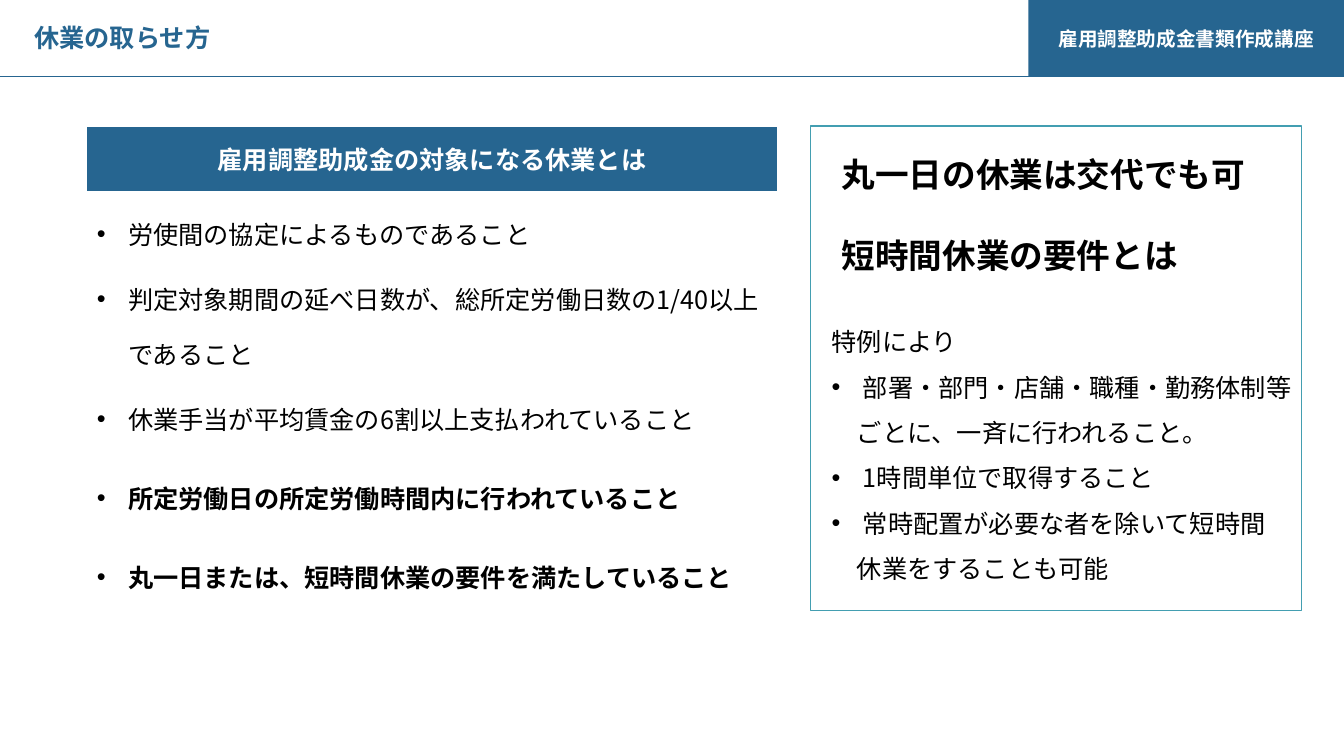
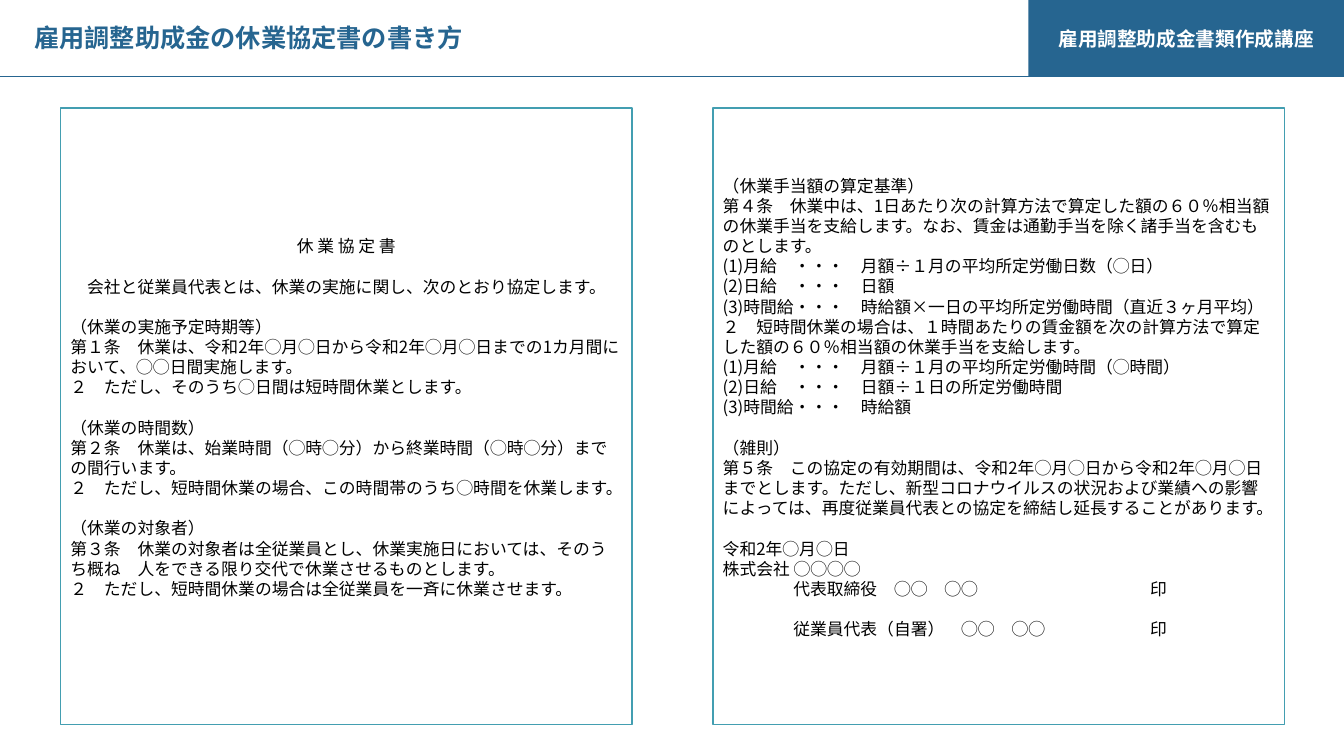
from dataclasses import dataclass

from lxml import etree
from pptx import Presentation
from pptx.dml.color import RGBColor
from pptx.enum.shapes import MSO_CONNECTOR as CONN, MSO_SHAPE as SHAPE
from pptx.enum.text import MSO_ANCHOR as ANCHOR, PP_ALIGN as ALIGN
from pptx.oxml.ns import qn
from pptx.util import Inches, Pt


@dataclass(frozen=True)
class Theme:
    """Colours, font and type sizes shared by the slides."""
    font: str = "Noto Sans CJK JP"
    navy: str = "266590"
    teal: str = "439EB1"
    black: str = "000000"
    white: str = "FFFFFF"
    band: int = 14
    body: int = 18
    lead: int = 24
    deed: int = 12
    leading: float = 1.2


T = Theme()
COURSE = "雇用調整助成金書類作成講座"

LEAVE_TITLE = "休業の取らせ方"
LEAVE_HEAD = "雇用調整助成金の対象になる休業とは"
LEAVE_RULES = [
    ("労使間の協定によるものであること", 0.65, False),
    ("判定対象期間の延べ日数が、総所定労働日数の1/40以上であること", 1.0, False),
    ("休業手当が平均賃金の6割以上支払われていること", 0.65, False),
    ("所定労働日の所定労働時間内に行われていること", 0.92, True),
    ("丸一日または、短時間休業の要件を満たしていること", 0.65, True),
]
LEADS = ["丸一日の休業は交代でも可", "短時間休業の要件とは"]
SHORT_LEAVE = [
    ("特例により", False),
    ("部署・部門・店舗・職種・勤務体制等", True),
    ("　ごとに、一斉に行われること。", False),
    ("1時間単位で取得すること", True),
    ("常時配置が必要な者を除いて短時間", True),
    ("　休業をすることも可能", False),
]

DEED_TITLE = "雇用調整助成金の休業協定書の書き方"
DEED_HEAD = "休 業 協 定 書"
DEED_LEFT = [
    [DEED_HEAD],
    ["　会社と従業員代表とは、休業の実施に関し、次のとおり協定します。"],
    ["（休業の実施予定時期等）",
     "第１条　休業は、令和2年◯月◯日から令和2年◯月◯日までの1カ月間において、◯◯日間実施します。",
     "２　ただし、そのうち◯日間は短時間休業とします。"],
    ["（休業の時間数）",
     "第２条　休業は、始業時間（◯時◯分）から終業時間（◯時◯分）までの間行います。",
     "２　ただし、短時間休業の場合、この時間帯のうち◯時間を休業します。"],
    ["（休業の対象者）",
     "第３条　休業の対象者は全従業員とし、休業実施日においては、そのうち概ね　人をできる限り交代で休業させるものとします。",
     "２　ただし、短時間休業の場合は全従業員を一斉に休業させます。"],
]
DEED_RIGHT = [
    ["（休業手当額の算定基準）",
     "第４条　休業中は、1日あたり次の計算方法で算定した額の６０％相当額の休業手当を支給します。なお、賃金は通勤手当を除く諸手当を含むものとします。",
     "(1)月給　・・・　月額÷１月の平均所定労働日数（◯日）",
     "(2)日給　・・・　日額",
     "(3)時間給・・・　時給額×一日の平均所定労働時間（直近３ヶ月平均）",
     "２　短時間休業の場合は、１時間あたりの賃金額を次の計算方法で算定した額の６０％相当額の休業手当を支給します。",
     "(1)月給　・・・　月額÷１月の平均所定労働時間（◯時間）",
     "(2)日給　・・・　日額÷１日の所定労働時間",
     "(3)時間給・・・　時給額"],
    ["（雑則）",
     "第５条　この協定の有効期間は、令和2年◯月◯日から令和2年◯月◯日までとします。ただし、新型コロナウイルスの状況および業績への影響によっては、再度従業員代表との協定を締結し延長することがあります。"],
    ["令和2年◯月◯日",
     "株式会社 ◯◯◯◯",
     "\t代表取締役　◯◯　◯◯\t印"],
    ["\t従業員代表（自署）　◯◯　◯◯\t印"],
]
SIGN_TABS = (0.7, 4.24)


def rgb(value):
    """Turn a hex string into a colour."""
    return RGBColor.from_string(value)


def box(*lengths):
    """Turn left, top, width and height in inches into lengths."""
    return [Inches(v) for v in lengths]


def add_run(p, text, size, color=T.black, bold=False):
    """Add one run in the theme font."""
    r = p.add_run()
    r.text = text
    f = r.font
    f.size, f.bold, f.name = Pt(size), bold, T.font
    f.color.rgb = rgb(color)
    etree.SubElement(r._r.get_or_add_rPr(), qn("a:ea"), typeface=T.font)


def next_par(tf, first):
    """Return the first paragraph of a frame, or a new one."""
    return tf.paragraphs[0] if first else tf.add_paragraph()


def set_bullet(p):
    """Give a paragraph a hanging round bullet."""
    pPr = p._p.get_or_add_pPr()
    pPr.set("marL", str(Inches(0.31)))
    pPr.set("indent", str(-Inches(0.31)))
    etree.SubElement(pPr, qn("a:buFont"), typeface="Arial")
    etree.SubElement(pPr, qn("a:buChar"), char="•")


def set_tabs(p, stops):
    """Give a paragraph left tab stops at the given inches."""
    tabs = etree.SubElement(p._p.get_or_add_pPr(), qn("a:tabLst"))
    for stop in stops:
        etree.SubElement(tabs, qn("a:tab"), pos=str(Inches(stop)), algn="l")


def add_rect(s, at, fill=None, line=None):
    """Add a flat rectangle with optional fill and outline."""
    sp = s.shapes.add_shape(SHAPE.RECTANGLE, *box(*at))
    sp.shadow.inherit = False
    if fill:
        sp.fill.solid()
        sp.fill.fore_color.rgb = rgb(fill)
    else:
        sp.fill.background()
    if line:
        sp.line.color.rgb = rgb(line)
        sp.line.width = Pt(1)
    else:
        sp.line.fill.background()
    sp.text_frame.word_wrap = True
    sp.text_frame.vertical_anchor = ANCHOR.MIDDLE
    return sp


def add_text(s, at):
    """Add a wrapping text box and return its frame."""
    tf = s.shapes.add_textbox(*box(*at)).text_frame
    tf.word_wrap = True
    return tf


def add_slide(prs, title):
    """Add a slide with the course band, the rule and its title."""
    s = prs.slides.add_slide(prs.slide_layouts[5])
    p = add_rect(s, (10.2, 0, 3.13, 0.76), T.navy).text_frame.paragraphs[0]
    p.alignment = ALIGN.CENTER
    add_run(p, COURSE, T.band, T.white, True)

    rule = s.shapes.add_connector(CONN.STRAIGHT, *box(13.33, 0.76, 0, 0.76))
    rule.line.color.rgb = rgb(T.navy)
    rule.line.width = Pt(0.5)
    etree.SubElement(rule._element.spPr, qn("a:effectLst"))

    sp = s.shapes.title
    sp.left, sp.top, sp.width, sp.height = box(0.24, 0.17, 9.5, 0.4)
    tf = sp.text_frame
    tf.word_wrap, tf.vertical_anchor = True, ANCHOR.MIDDLE
    p = tf.paragraphs[0]
    p.alignment = ALIGN.LEFT
    add_run(p, title, T.body, T.navy, True)
    return s


def add_rules_table(s):
    """Add the table of conditions for eligible leave."""
    heights = [0.65] + [h for _, h, _ in LEAVE_RULES]
    at = box(0.86, 1.25, 6.85, sum(heights))
    table = s.shapes.add_table(len(heights), 1, *at).table
    table.first_row = table.horz_banding = False
    for row, height in zip(table.rows, heights):
        row.height = Inches(height)
        cell = row.cells[0]
        cell.vertical_anchor = ANCHOR.MIDDLE
        cell.fill.background()

    head = table.cell(0, 0)
    head.fill.solid()
    head.fill.fore_color.rgb = rgb(T.navy)
    p = head.text_frame.paragraphs[0]
    p.alignment = ALIGN.CENTER
    add_run(p, LEAVE_HEAD, T.body, T.white, True)

    for i, (text, _, bold) in enumerate(LEAVE_RULES, 1):
        p = table.cell(i, 0).text_frame.paragraphs[0]
        p.line_spacing = 1.5
        set_bullet(p)
        add_run(p, text, T.body, bold=bold)


def add_short_leave(s):
    """Add the framed panel on short-time leave."""
    add_rect(s, (8.04, 1.25, 4.87, 4.81), line=T.teal)
    tf = add_text(s, (8.25, 1.48, 4.5, 1.31))
    for i, text in enumerate(LEADS):
        p = next_par(tf, i == 0)
        p.line_spacing = Pt(T.lead * T.leading)
        p.space_before = Pt(T.lead * T.leading if i else 0)
        add_run(p, text, T.lead, bold=True)

    tf = add_text(s, (8.15, 3.04, 4.81, 2.78))
    for i, (text, bulleted) in enumerate(SHORT_LEAVE):
        p = next_par(tf, i == 0)
        p.line_spacing = Pt(T.body * T.leading * 1.5)
        if bulleted:
            set_bullet(p)
        add_run(p, text, T.body)


def add_deed_page(s, left, articles, bottom):
    """Add one framed page of the agreement."""
    tf = add_rect(s, (left, 1.07, 5.67, 6.12), T.white, T.teal).text_frame
    tf.margin_top, tf.margin_bottom = Inches(0.07), Inches(bottom)
    line = Pt(T.deed * T.leading)
    for i, article in enumerate(articles):
        for j, text in enumerate(article):
            p = next_par(tf, i == j == 0)
            p.alignment = ALIGN.CENTER if text == DEED_HEAD else ALIGN.LEFT
            p.line_spacing = line
            p.space_before = line if i and j == 0 else 0
            if "\t" in text:
                set_tabs(p, SIGN_TABS)
            add_run(p, text, T.deed)


def main():
    """Build and save the two slides."""
    prs = Presentation()
    prs.slide_width, prs.slide_height = Inches(13.33), Inches(7.5)

    s = add_slide(prs, LEAVE_TITLE)
    add_rules_table(s)
    add_short_leave(s)

    s = add_slide(prs, DEED_TITLE)
    add_deed_page(s, 0.6, DEED_LEFT, 0.05)
    add_deed_page(s, 7.07, DEED_RIGHT, 0.25)

    prs.save("out.pptx")


if __name__ == "__main__":
    main()
